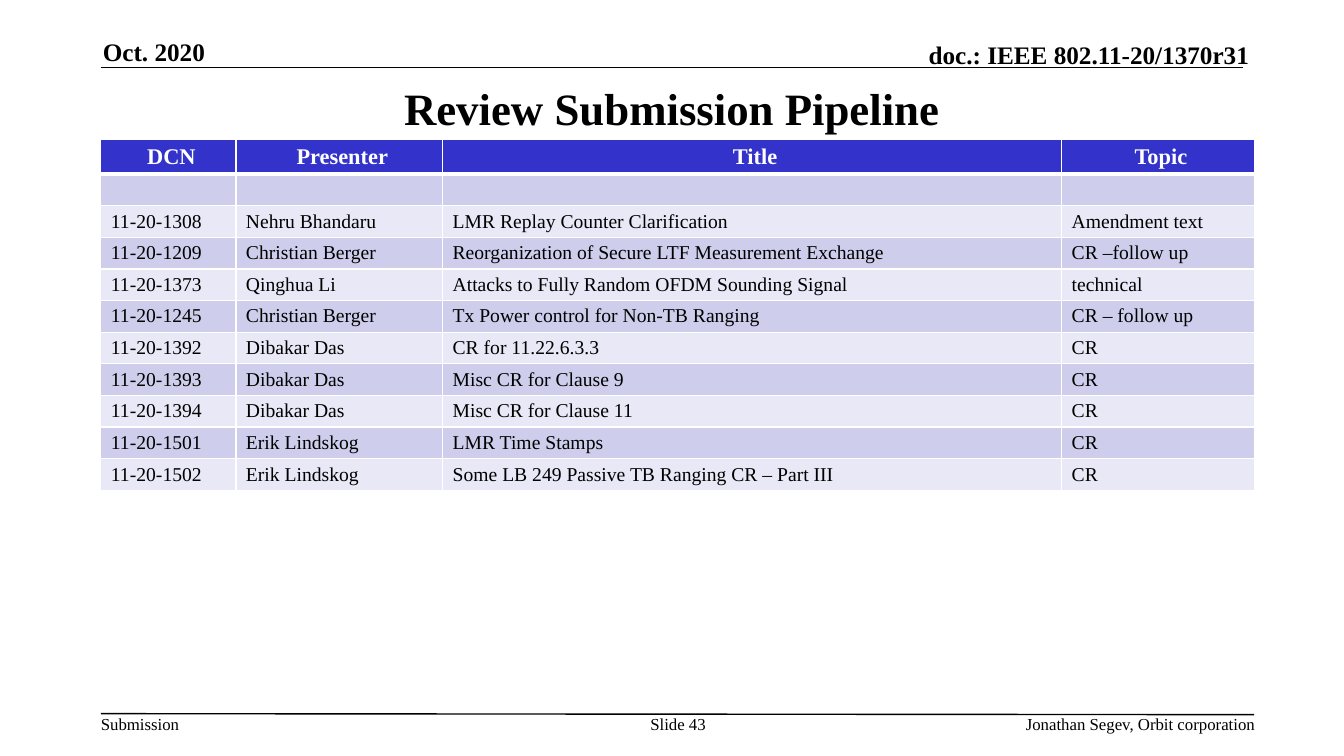
from lxml.etree import SubElement
from pptx import Presentation
from pptx.dml.color import RGBColor
from pptx.enum.shapes import MSO_CONNECTOR
from pptx.enum.text import MSO_ANCHOR, PP_ALIGN
from pptx.oxml.ns import qn
from pptx.util import Inches, Pt

TITLE = "Review Submission Pipeline"
HEADER = ("DCN", "Presenter", "Title", "Topic")
SUBMISSIONS = [
    ("", "", "", ""),
    ("11-20-1308", "Nehru Bhandaru", "LMR Replay Counter Clarification", "Amendment text"),
    ("11-20-1209", "Christian Berger", "Reorganization of Secure LTF Measurement Exchange",
     "CR –follow up"),
    ("11-20-1373", "Qinghua Li", "Attacks to Fully Random OFDM Sounding Signal", "technical"),
    ("11-20-1245", "Christian Berger", "Tx Power control for Non-TB Ranging", "CR – follow up"),
    ("11-20-1392", "Dibakar Das", "CR for 11.22.6.3.3", "CR"),
    ("11-20-1393", "Dibakar Das", "Misc CR for Clause 9", "CR"),
    ("11-20-1394", "Dibakar Das", "Misc CR for Clause 11", "CR"),
    ("11-20-1501", "Erik Lindskog", "LMR Time Stamps", "CR"),
    ("11-20-1502", "Erik Lindskog", "Some LB 249 Passive TB Ranging CR – Part III", "CR"),
]

FONT = "Times New Roman"
BLACK = RGBColor(0x00, 0x00, 0x00)
WHITE = RGBColor(0xFF, 0xFF, 0xFF)
BLUE = RGBColor(0x33, 0x33, 0xCC)
BANDS = (RGBColor(0xCE, 0xCE, 0xEC), RGBColor(0xE8, 0xE8, 0xF6))

LEFT, FOOT = 1, 7.08
COLUMNS = (1.34, 2.05, 6.14, 1.91)
WIDTH = sum(COLUMNS)
TABLE_TOP, TABLE_HEIGHT, HEADER_HEIGHT = 1.38, 3.48, 0.34
ROW_HEIGHT = (TABLE_HEIGHT - HEADER_HEIGHT) / len(SUBMISSIONS)

# text, (left, top, width, height), size, bold, alignment, anchor
MARGIN_TEXTS = [
    ("Oct. 2020", (1.02, 0.36, 2.73, 0.3), 18, True, PP_ALIGN.LEFT, MSO_ANCHOR.BOTTOM),
    ("doc.: IEEE 802.11-20/1370r31", (7.29, 0.39, 5.1, 0.3), 18, True,
     PP_ALIGN.RIGHT, MSO_ANCHOR.BOTTOM),
    ("Submission", (LEFT, FOOT, 0.79, 0.2), 12, False, PP_ALIGN.LEFT, MSO_ANCHOR.TOP),
    ("Slide 43", (6.34, FOOT, 0.77, 0.4), 12, False, PP_ALIGN.CENTER, MSO_ANCHOR.TOP),
    ("Jonathan Segev, Orbit corporation", (7.81, FOOT, 4.64, 0.2), 12, False,
     PP_ALIGN.RIGHT, MSO_ANCHOR.TOP),
]
RULES = [(LEFT, 0.67, 12.33, 0.67), (LEFT, FOOT, LEFT + WIDTH, FOOT + 0.01)]


def style(p, size, bold=False, color=BLACK, align=PP_ALIGN.LEFT):
    p.alignment = align
    p.font.name, p.font.size, p.font.bold = FONT, Pt(size), bold
    p.font.color.rgb = color


def add_text(s, text, box, size, bold, align, anchor):
    tf = s.shapes.add_textbox(*map(Inches, box)).text_frame
    tf.margin_left = tf.margin_right = tf.margin_top = tf.margin_bottom = 0
    tf.word_wrap, tf.vertical_anchor = True, anchor
    tf.text = text
    style(tf.paragraphs[0], size, bold, align=align)


def add_rule(s, ends):
    line = s.shapes.add_connector(MSO_CONNECTOR.STRAIGHT, *map(Inches, ends))
    line.line.color.rgb, line.line.width = BLACK, Pt(1)
    SubElement(line.element.spPr, qn("a:effectLst"))


def add_borders(cell, top, bottom):
    tcPr = cell._tc.get_or_add_tcPr()
    for side, width in (("L", 1), ("R", 1), ("T", top), ("B", bottom)):
        ln = SubElement(tcPr, qn(f"a:ln{side}"), w=str(Pt(width)))
        fill = SubElement(ln, qn("a:solidFill"))
        SubElement(fill, qn("a:srgbClr"), val=str(WHITE))


def add_pipeline(s):
    rows = [HEADER] + SUBMISSIONS
    table = s.shapes.add_table(len(rows), len(COLUMNS), Inches(LEFT), Inches(TABLE_TOP),
                               Inches(WIDTH), Inches(TABLE_HEIGHT)).table
    for column, width in zip(table.columns, COLUMNS):
        column.width = Inches(width)
    for i, values in enumerate(rows):
        head = i == 0
        table.rows[i].height = Inches(HEADER_HEIGHT if head else ROW_HEIGHT)
        for cell, value in zip(table.rows[i].cells, values):
            add_borders(cell, 3 if i == 1 else 1, 3 if head else 1)
            cell.fill.solid()
            cell.fill.fore_color.rgb = BLUE if head else BANDS[(i - 1) % 2]
            cell.margin_left = Inches(0.1)
            cell.margin_right = Inches(0.04 if head else 0.1)
            cell.margin_top = cell.margin_bottom = Inches(0.04 if value else 0)
            cell.vertical_anchor = MSO_ANCHOR.MIDDLE
            cell.text = value
            p = cell.text_frame.paragraphs[0]
            if head:
                style(p, 16, True, WHITE, PP_ALIGN.CENTER)
            else:
                style(p, 14)


def main():
    prs = Presentation()
    prs.slide_width, prs.slide_height = Inches(13.33), Inches(7.5)
    s = prs.slides.add_slide(prs.slide_layouts[5])
    title = s.shapes.title
    title.left, title.top = Inches(LEFT), Inches(0.75)
    title.width, title.height = Inches(11.33), Inches(0.64)
    title.text_frame.text = TITLE
    title.text_frame.vertical_anchor = MSO_ANCHOR.MIDDLE
    style(title.text_frame.paragraphs[0], 32, True, align=PP_ALIGN.CENTER)
    for ends in RULES:
        add_rule(s, ends)
    for item in MARGIN_TEXTS:
        add_text(s, *item)
    add_pipeline(s)
    prs.save("out.pptx")


if __name__ == "__main__":
    main()
